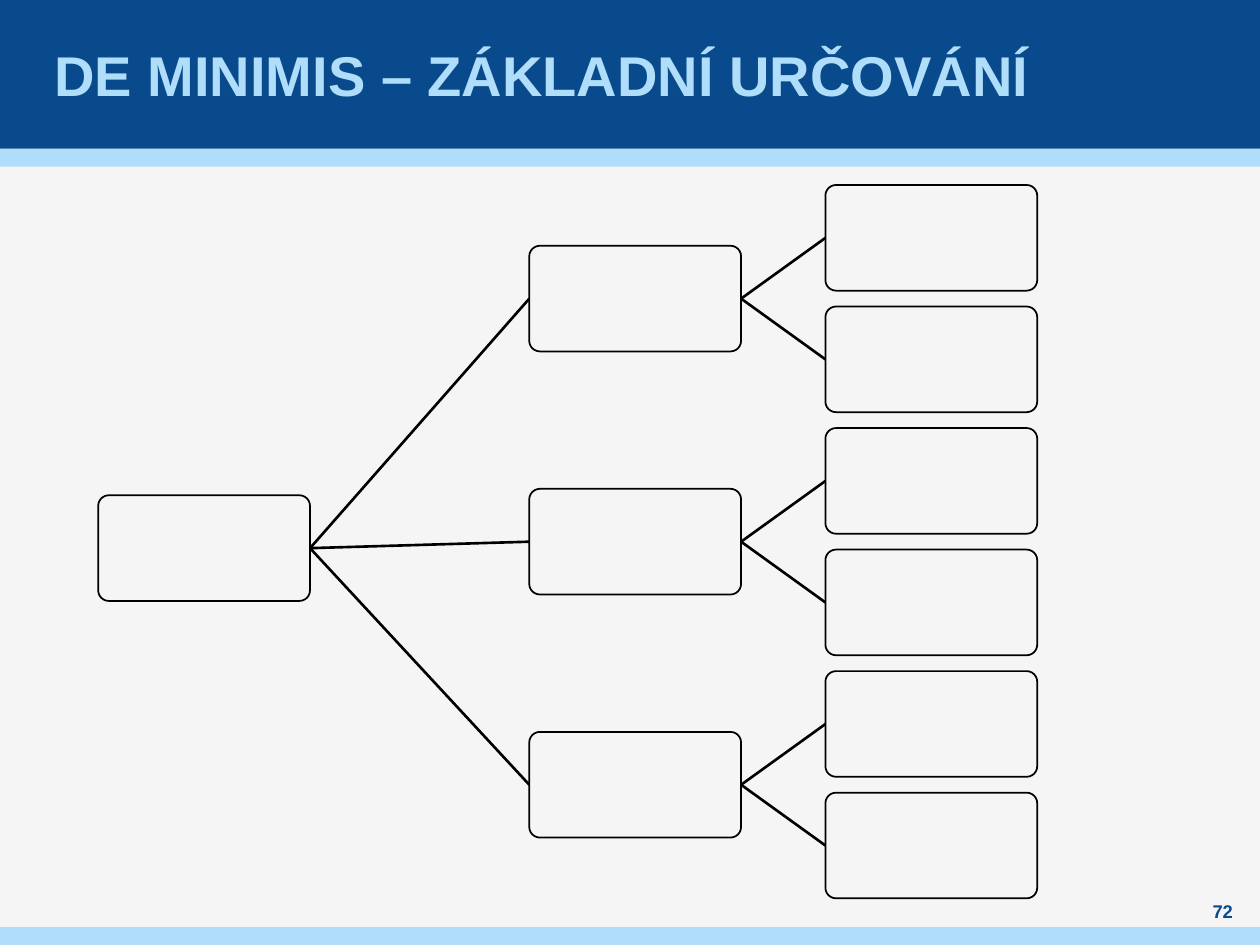
from dataclasses import dataclass

from lxml.etree import SubElement
from pptx import Presentation
from pptx.dml.color import RGBColor
from pptx.enum.shapes import MSO_CONNECTOR, MSO_SHAPE
from pptx.enum.text import MSO_ANCHOR, PP_ALIGN
from pptx.oxml.ns import qn
from pptx.slide import Slide
from pptx.util import Cm, Pt

NAVY = RGBColor(0x08, 0x4A, 0x8B)
SKY = RGBColor(0xAF, 0xDD, 0xFA)
PAPER = RGBColor(0xF5, 0xF5, 0xF5)
BLACK = RGBColor(0, 0, 0)

PAGE_WIDTH, PAGE_HEIGHT = 25.4, 19.05
HEADER_HEIGHT, STRIPE_HEIGHT = 3.0, 0.36
NODE_WIDTH, NODE_HEIGHT = 4.27, 2.13
ROOT_LEFT, BRANCH_LEFT, LEAF_LEFT = 1.98, 10.67, 16.64
ROOT_MIDDLE, FIRST_BRANCH_MIDDLE = 11.05, 6.02
LEAF_PITCH = 2.45
LEAVES_PER_BRANCH, BRANCH_COUNT = 2, 3


@dataclass(frozen=True)
class Band:
    top: float
    height: float
    color: RGBColor


@dataclass(frozen=True)
class Label:
    text: str
    left: float
    top: float
    width: float
    height: float
    size: float
    color: RGBColor
    align: PP_ALIGN
    side_margin: float = 0


@dataclass(frozen=True)
class Node:
    left: float
    middle: float
    children: tuple["Node", ...] = ()


BANDS = (
    Band(HEADER_HEIGHT, STRIPE_HEIGHT, SKY),
    Band(0, HEADER_HEIGHT, NAVY),
    Band(PAGE_HEIGHT - STRIPE_HEIGHT, STRIPE_HEIGHT, SKY),
)
LABELS = (
    Label("DE MINIMIS – ZÁKLADNÍ URČOVÁNÍ", 1, 0, 23.4, HEADER_HEIGHT,
          32, SKY, PP_ALIGN.LEFT, 0.1),
    Label("72", 24, 18.11, 1.3, 0.51, 10.5, NAVY, PP_ALIGN.CENTER),
)


def add_band(page: Slide, band: Band) -> None:
    box = page.shapes.add_shape(
        MSO_SHAPE.RECTANGLE, 0, Cm(band.top), Cm(PAGE_WIDTH), Cm(band.height))
    box.shadow.inherit = False
    box.fill.solid()
    box.fill.fore_color.rgb = band.color
    box.line.fill.background()


def add_label(page: Slide, label: Label) -> None:
    box = page.shapes.add_textbox(
        Cm(label.left), Cm(label.top), Cm(label.width), Cm(label.height))
    frame = box.text_frame
    frame.text = label.text
    frame.word_wrap = True
    frame.vertical_anchor = MSO_ANCHOR.MIDDLE
    frame.margin_left = frame.margin_right = Cm(label.side_margin)
    frame.margin_top = frame.margin_bottom = 0
    para = frame.paragraphs[0]
    para.alignment = label.align
    font = para.runs[0].font
    font.name = "Arial"
    font.size = Pt(label.size)
    font.bold = True
    font.color.rgb = label.color


def add_link(page: Slide, parent: Node, child: Node) -> None:
    link = page.shapes.add_connector(
        MSO_CONNECTOR.STRAIGHT,
        Cm(parent.left + NODE_WIDTH), Cm(parent.middle),
        Cm(child.left), Cm(child.middle))
    link.line.color.rgb = BLACK
    link.line.width = Pt(1.5)
    SubElement(link._element.spPr, qn("a:effectLst"))


def add_tree(page: Slide, node: Node) -> None:
    box = page.shapes.add_shape(
        MSO_SHAPE.ROUNDED_RECTANGLE,
        Cm(node.left), Cm(node.middle - NODE_HEIGHT / 2),
        Cm(NODE_WIDTH), Cm(NODE_HEIGHT))
    box.adjustments[0] = 0.1
    box.shadow.inherit = False
    box.fill.solid()
    box.fill.fore_color.rgb = PAPER
    box.line.color.rgb = BLACK
    box.line.width = Pt(1)
    for child in node.children:
        add_link(page, node, child)
        add_tree(page, child)


def make_branch(index: int) -> Node:
    middle = FIRST_BRANCH_MIDDLE + index * LEAVES_PER_BRANCH * LEAF_PITCH
    first_leaf = middle - (LEAVES_PER_BRANCH - 1) * LEAF_PITCH / 2
    leaves = tuple(Node(LEAF_LEFT, first_leaf + leaf * LEAF_PITCH)
                   for leaf in range(LEAVES_PER_BRANCH))
    return Node(BRANCH_LEFT, middle, leaves)


def main() -> None:
    deck = Presentation()
    deck.slide_width, deck.slide_height = Cm(PAGE_WIDTH), Cm(PAGE_HEIGHT)
    page = deck.slides.add_slide(deck.slide_layouts[6])
    page.background.fill.solid()
    page.background.fill.fore_color.rgb = PAPER
    for band in BANDS:
        add_band(page, band)
    for label in LABELS:
        add_label(page, label)
    branches = tuple(make_branch(index) for index in range(BRANCH_COUNT))
    add_tree(page, Node(ROOT_LEFT, ROOT_MIDDLE, branches))
    deck.save("out.pptx")


if __name__ == "__main__":
    main()
